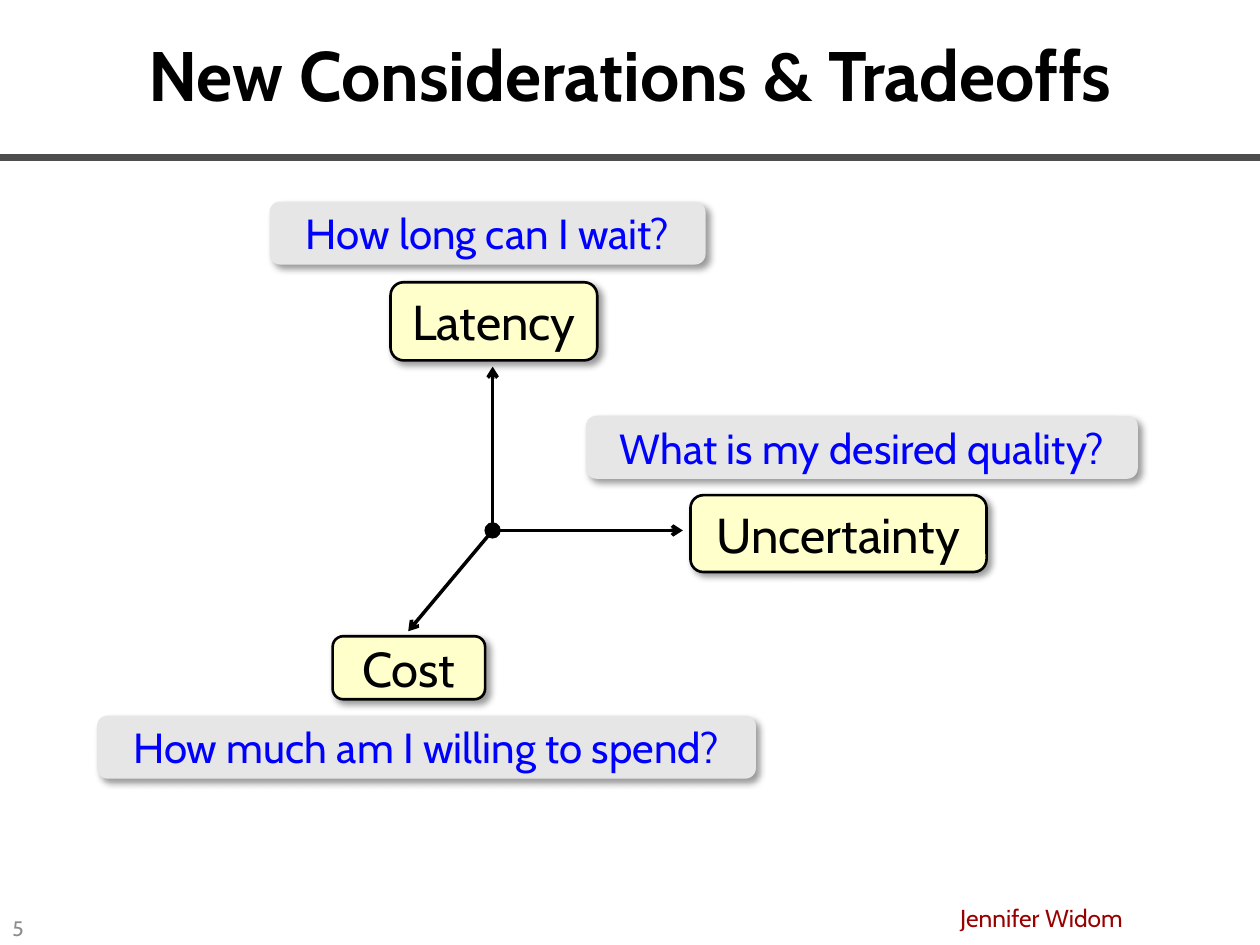
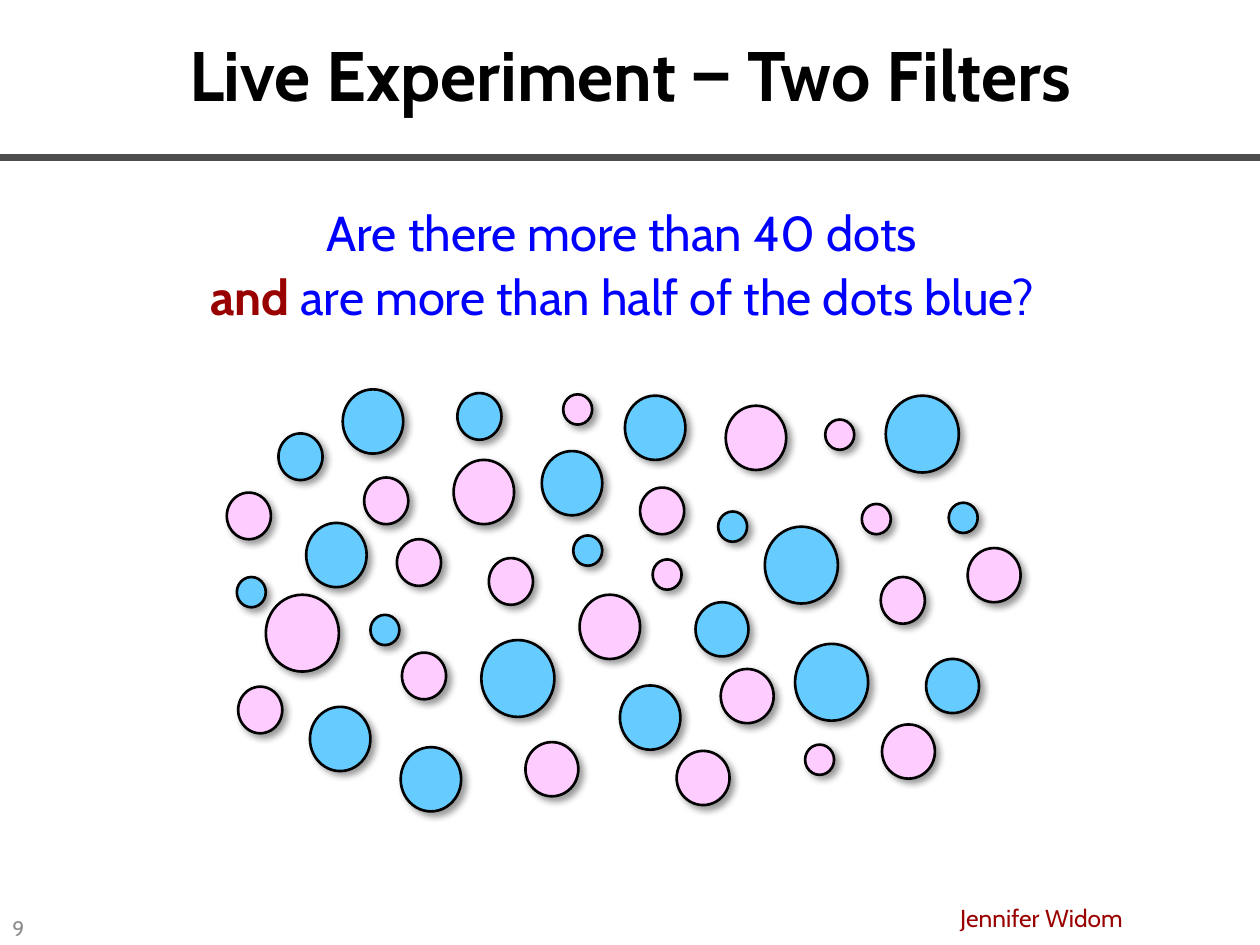
import lxml.etree
import pptx
import pptx.util
import pptx.dml.color
import pptx.enum.shapes
import pptx.enum.text
import pptx.oxml.ns

HUES = {
    "ink": "000000", "rule": "4D4D4D", "wine": "990000", "grey": "8C8C8C",
    "cream": "FFFFCC", "mist": "E6E6E6", "query": "0000FF",
    "blue": "66CCFF", "pink": "FFCCFF",
}
COLS = 100
SIZE = (10, 7.5)
CELL = pptx.util.Inches(SIZE[0]) / COLS

FONTS = {
    "title": {"size": 40, "bold": True, "hue": "ink"},
    "author": {"size": 14, "hue": "wine"},
    "page": {"size": 12, "hue": "grey"},
    "ask": {"size": 28, "hue": "query"},
    "stress": {"size": 28, "bold": True, "hue": "wine"},
    "axis": {"size": 28, "hue": "ink"},
    "query": {"size": 24, "hue": "query"},
}
AUTHOR = "Jennifer Widom"

TRADE = {
    "page": "5",
    "title": [("New Considerations ", {}), ("&", {"name": "Calibri"}), (" Tradeoffs", {})],
}
HUB = (39.1, 42.1)
DISC = 1.3
TIPS = [(54.2, 42.1), (39.1, 29.1), (32.4, 50.1)]
AXES = [
    ("Latency", (31, 22.4, 16.4, 6.2)),
    ("Cost", (26.4, 50.5, 12.1, 5)),
    ("Uncertainty", (54.8, 39.3, 23.5, 6.1)),
]
ASKS = [
    ("How much am I willing to spend?", (7.7, 56.8, 52.3, 5)),
    ("How long can I wait?", (21.4, 16, 34.6, 5)),
    ("What is my desired quality?", (46.5, 33, 43.8, 5)),
]

FILTER = {"page": "9", "title": [("Live Experiment ‒ Two Filters", {})]}
TASK = [
    [("Are there more than 40 dots", "ask")],
    [("and", "stress"), (" are more than half of the dots blue?", "ask")],
]
DOTS = [
    ((3.5, 3.7), {
        "blue": [(22.1, 34.4), (36.3, 31.2)],
        "pink": [(31.5, 42.8), (18.9, 54.5), (50.8, 38.7), (18, 39.1),
                 (38.8, 44.3), (28.9, 37.9), (31.9, 51.8), (69.9, 45.8)],
    }),
    ((4.8, 5.1), {
        "blue": [(24.3, 41.5), (49.6, 31.4), (43, 35.8), (24.6, 56.1),
                 (27.2, 30.9), (49.2, 54.4), (31.8, 59.3)],
        "pink": [(36, 36.5), (57.6, 32.2), (46, 47.2)],
    }),
    ((2.3, 2.4), {
        "blue": [(29.4, 48.8), (45.5, 42.5), (57, 40.6), (75.3, 39.9), (18.8, 45.8)],
        "pink": [(68.4, 40), (65.5, 33.3), (63.9, 59.1), (44.7, 31.3), (51.8, 44.4)],
    }),
    ((5.8, 6.1), {
        "blue": [(60.7, 41.8), (38.2, 50.8), (63.1, 51.1), (70.3, 31.4)],
        "pink": [(21.1, 47.2)],
    }),
    ((4.2, 4.3), {
        "blue": [(55.2, 47.8), (73.5, 52.3)],
        "pink": [(70, 57.5), (57.2, 53.1), (53.7, 59.6), (41.7, 58.9), (76.8, 43.5)],
    }),
]

FORM = pptx.enum.shapes.MSO_SHAPE
ALIGN = pptx.enum.text.PP_ALIGN
MID = pptx.enum.text.MSO_ANCHOR.MIDDLE
TOP = pptx.enum.text.MSO_ANCHOR.TOP


def grid(vals):
    return [pptx.util.Emu(round(val * CELL)) for val in vals]


def hue(key):
    return pptx.dml.color.RGBColor.from_string(HUES[key])


def node(root, tag, **attrs):
    return lxml.etree.SubElement(root, pptx.oxml.ns.qn("a:" + tag), attrs)


def put(item, vals):
    for key, val in vals.items():
        setattr(item, key, val)


def write(frame, rows, align, anchor=MID, wrap=True, after=0):
    put(frame, {"word_wrap": wrap, "vertical_anchor": anchor})
    for num, row in enumerate(rows):
        para = frame.add_paragraph() if num else frame.paragraphs[0]
        put(para, {"alignment": align, "space_after": pptx.util.Pt(after)})
        for text, kind, *more in row:
            run = para.add_run()
            run.text = text
            look = {"name": "Cabin", "bold": False, **FONTS[kind]}
            for part in more:
                look.update(part)
            run.font.color.rgb = hue(look.pop("hue"))
            look["size"] = pptx.util.Pt(look["size"])
            put(run.font, look)


def label(slide, spot, rows, align, **opts):
    box = slide.shapes.add_textbox(*grid(spot))
    write(box.text_frame, rows, align, **opts)


def shape(slide, form, spot, fill, edge=True, shade=True):
    item = slide.shapes.add_shape(form, *grid(spot))
    item.fill.solid()
    item.fill.fore_color.rgb = hue(fill)
    if edge:
        item.line.color.rgb = hue("ink")
        item.line.width = pptx.util.Pt(1.5)
    else:
        item.line.fill.background()
    item.shadow.inherit = False
    if shade:
        glow = item._element.spPr.find(pptx.oxml.ns.qn("a:effectLst"))
        cast = node(glow, "outerShdw", blurRad="50800", dist="38100",
                    dir="2700000", algn="tl", rotWithShape="0")
        node(node(cast, "srgbClr", val=HUES["ink"]), "alpha", val="40000")
    return item


def line(slide, start, end, tint, width, arrow=False):
    link = slide.shapes.add_connector(
        pptx.enum.shapes.MSO_CONNECTOR.STRAIGHT, *grid(start + end))
    link.line.color.rgb = hue(tint)
    link.line.width = pptx.util.Pt(width)
    if arrow:
        node(link.line._get_or_add_ln(), "tailEnd", type="arrow")
    node(link._element.spPr, "effectLst")


def base(deck, data):
    slide = deck.slides.add_slide(deck.slide_layouts[6])
    line(slide, (0, 12.5), (COLS, 12.5), "rule", 4.5)
    label(slide, (72, 71.2, 18.1, 4.3), [[(AUTHOR, "author")]], ALIGN.RIGHT, anchor=TOP)
    label(slide, (0, 72.4, 4.7, 2.6), [[(data["page"], "page")]], ALIGN.LEFT)
    title = [(text, "title", more) for text, more in data["title"]]
    label(slide, (0, 0, COLS, 11.7), [title], ALIGN.CENTER)
    return slide


def trade(deck):
    slide = base(deck, TRADE)
    for tip in TIPS:
        line(slide, HUB, tip, "ink", 2, arrow=True)
    for group, fill, kind in ((AXES, "cream", "axis"), (ASKS, "mist", "query")):
        for text, spot in group:
            box = shape(slide, FORM.ROUNDED_RECTANGLE, spot, fill, edge=kind == "axis")
            write(box.text_frame, [[(text, kind)]], ALIGN.CENTER, wrap=False)
    spot = [mid - DISC / 2 for mid in HUB] + [DISC, DISC]
    shape(slide, FORM.FLOWCHART_CONNECTOR, spot, "ink", edge=False, shade=False)


def sift(deck):
    slide = base(deck, FILTER)
    label(slide, (3.1, 15.6, 92.5, 13.2), TASK, ALIGN.CENTER, anchor=TOP, after=2.8)
    for size, tints in DOTS:
        for tint, spots in tints.items():
            for spot in spots:
                shape(slide, FORM.OVAL, spot + size, tint)


def main():
    deck = pptx.Presentation()
    wide, high = map(pptx.util.Inches, SIZE)
    put(deck, {"slide_width": wide, "slide_height": high})
    trade(deck)
    sift(deck)
    deck.save("out.pptx")


if __name__ == "__main__":
    main()
